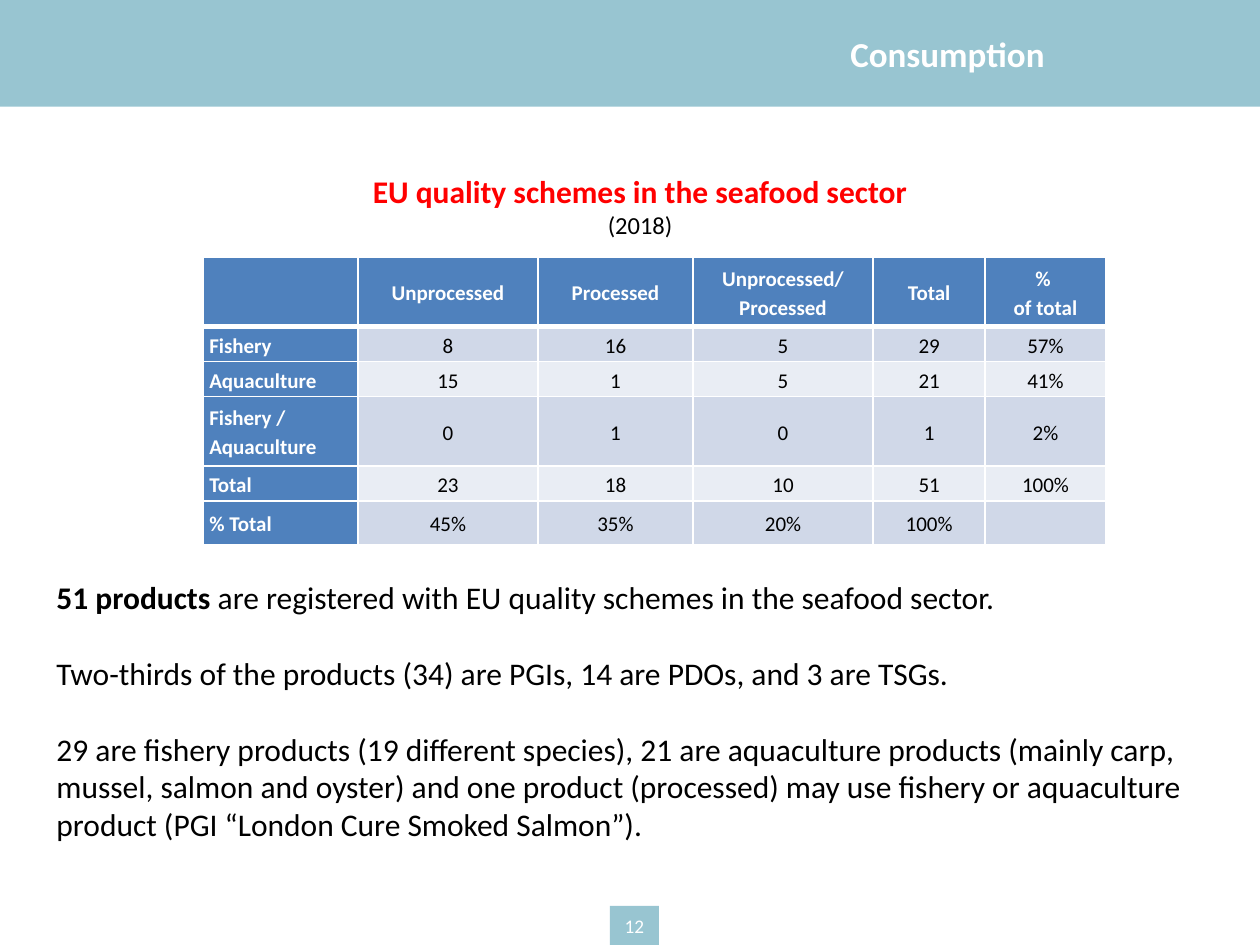
"""Builds the slide on EU quality schemes in the seafood sector."""
from dataclasses import dataclass

from lxml import etree
from pptx import Presentation
from pptx import util as u
from pptx.dml.color import RGBColor
from pptx.enum import shapes, text
from pptx.oxml.ns import qn

Pt = u.Pt
LEFT, CENTER, JUSTIFY = text.PP_ALIGN.LEFT, text.PP_ALIGN.CENTER, text.PP_ALIGN.JUSTIFY


@dataclass(frozen=True)
class Theme:
    font: str = "Calibri"
    band: str = "98C5D1"
    header: str = "4F81BD"
    stripes: tuple = ("D0D8E8", "E9EDF4")
    white: str = "FFFFFF"
    black: str = "000000"
    accent: str = "FF0000"
    heading: int = 20
    body: int = 18
    caption: int = 14
    cell: int = 12
    number: int = 11


class SlideBuilder:
    def __init__(self, page, theme):
        self.page = page
        self.theme = theme

    def band(self, left, top, width, height):
        box = self.page.shapes.add_shape(
            shapes.MSO_SHAPE.RECTANGLE, Pt(left), Pt(top), Pt(width), Pt(height))
        box.shadow.inherit = False
        box.fill.solid()
        box.fill.fore_color.rgb = RGBColor.from_string(self.theme.band)
        box.line.fill.background()

    def span(self, para, words, size, color, bold=False):
        span = para.add_run()
        span.text = words
        span.font.name = self.theme.font
        span.font.size = Pt(size)
        span.font.bold = bold
        span.font.color.rgb = RGBColor.from_string(color)

    def fill_frame(self, frame, paragraphs, align, gap=0, spacing=None):
        for index, spans in enumerate(paragraphs):
            para = frame.add_paragraph() if index else frame.paragraphs[0]
            para.alignment = align
            if spacing:
                para.line_spacing = spacing
            if index and gap:
                para.space_before = Pt(gap)
            for span in spans:
                self.span(para, *span)

    def text_box(self, left, top, width, height, paragraphs, align=LEFT, gap=0, wrap=True):
        box = self.page.shapes.add_textbox(Pt(left), Pt(top), Pt(width), Pt(height))
        box.text_frame.word_wrap = wrap
        self.fill_frame(box.text_frame, paragraphs, align, gap)
        return box

    def cell_borders(self, cell, top, bottom):
        properties = cell._tc.get_or_add_tcPr()
        widths = {"lnL": 1, "lnR": 1, "lnT": top, "lnB": bottom}
        for index, (side, width) in enumerate(widths.items()):
            line = etree.Element(qn(f"a:{side}"), w=str(Pt(width)))
            fill = etree.SubElement(line, qn("a:solidFill"))
            etree.SubElement(fill, qn("a:srgbClr"), val=self.theme.white)
            properties.insert(index, line)

    def table(self, left, top, widths, heights, rows):
        theme = self.theme
        grid = self.page.shapes.add_table(
            len(rows), len(widths), Pt(left), Pt(top), Pt(sum(widths)), Pt(sum(heights))).table
        for column, width in zip(grid.columns, widths):
            column.width = Pt(width)
        for r, (height, row) in enumerate(zip(heights, rows)):
            grid.rows[r].height = Pt(height)
            for c, words in enumerate(row):
                cell = grid.cell(r, c)
                heading = r == 0 or c == 0
                cell.vertical_anchor = text.MSO_ANCHOR.MIDDLE
                cell.margin_left = cell.margin_right = Pt(3.6)
                cell.margin_top = cell.margin_bottom = 0
                cell.fill.solid()
                cell.fill.fore_color.rgb = RGBColor.from_string(
                    theme.header if heading else theme.stripes[(r - 1) % 2])
                self.cell_borders(cell, 3 if r == 1 else 1, 3 if r == 0 else 1)
                if words:
                    color = theme.white if heading else theme.black
                    lines = [[(line, theme.cell, color, heading)] for line in words.split("\n")]
                    self.fill_frame(cell.text_frame, lines, CENTER if c or r == 0 else LEFT,
                                    spacing=1.15)


SCHEMES = [
    ["", "Unprocessed", "Processed", "Unprocessed/\nProcessed", "Total", "% \nof total"],
    ["Fishery", "8", "16", "5", "29", "57%"],
    ["Aquaculture", "15", "1", "5", "21", "41%"],
    ["Fishery /\nAquaculture", "0", "1", "0", "1", "2%"],
    ["Total", "23", "18", "10", "51", "100%"],
    ["% Total", "45%", "35%", "20%", "100%", ""],
]


def main():
    theme = Theme()
    deck = Presentation()
    deck.slide_width, deck.slide_height = Pt(720), Pt(540)
    slide = SlideBuilder(deck.slides.add_slide(deck.slide_layouts[6]), theme)

    slide.band(348.5, 517.7, 28, 22.3)
    slide.band(0, 0, 720, 61)
    slide.text_box(348.5, 519.1, 28, 21.6, [[("12", theme.number, theme.white)]], CENTER)
    slide.text_box(478.8, 15.1, 126.7, 31.5,
                   [[("Consumption", theme.heading, theme.white, True)]], wrap=False)
    slide.text_box(99.4, 95, 532.8, 46, [
        [("EU quality schemes in the seafood sector", theme.body, theme.accent, True)],
        [("(2018)", theme.caption, theme.black)],
    ], CENTER)

    body = (theme.body, theme.black)
    findings = slide.text_box(25.2, 327, 657.4, 160, [
        [("51 products", *body, True),
         (" are registered with EU quality schemes in the seafood sector.", *body)],
        [("Two-thirds of the products (34) are PGIs, 14 are PDOs, and 3 are TSGs.", *body)],
        [("29 are fishery products (19 different species), 21 are aquaculture products "
          "(mainly carp, mussel, salmon and oyster) and one product (processed) may use "
          "fishery or aquaculture product (PGI “London Cure Smoked Salmon”).", *body)],
    ], gap=21.6)
    findings.text_frame.paragraphs[0].alignment = JUSTIFY

    slide.table(116, 147, [88.5, 103, 88.5, 103, 64, 69],
                [39.6, 20, 20, 39.6, 20, 25.2], SCHEMES)
    deck.save("out.pptx")


if __name__ == "__main__":
    main()
